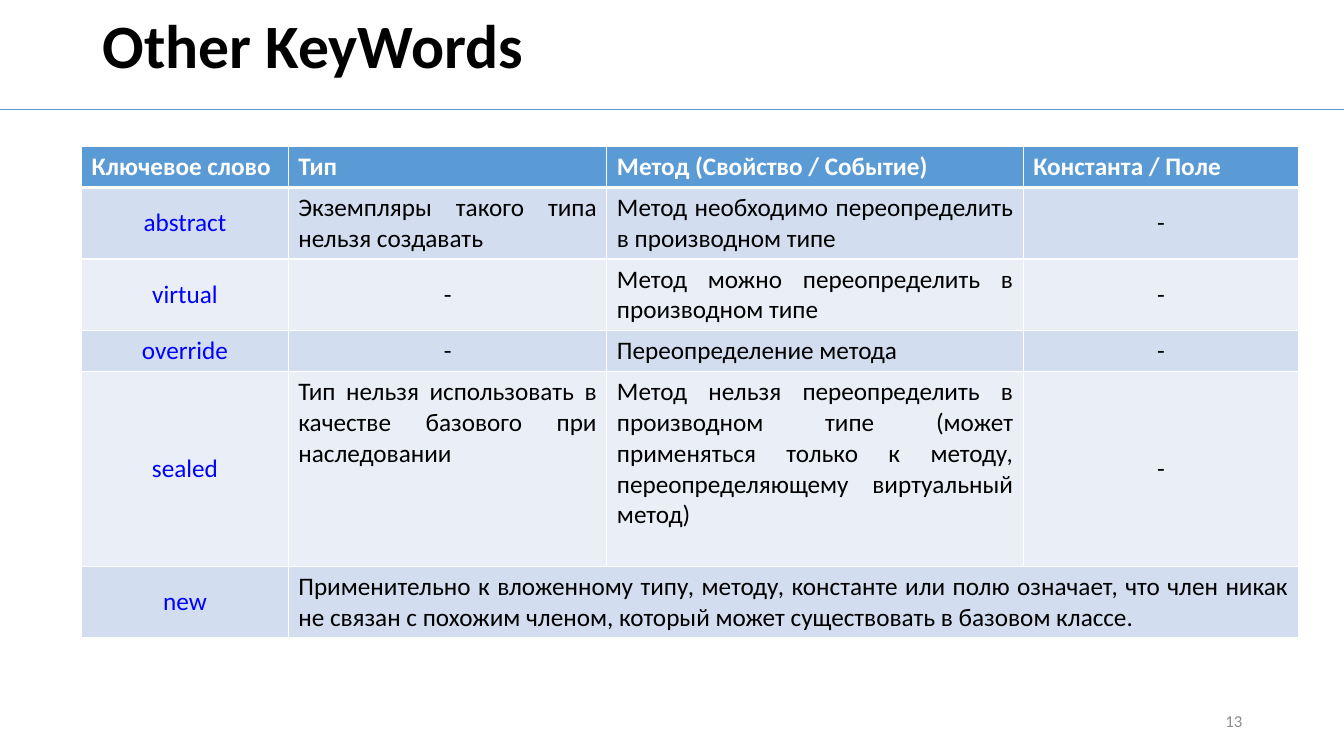
from dataclasses import dataclass

from lxml.etree import SubElement
from pptx import Presentation
from pptx.dml.color import RGBColor
from pptx.enum.shapes import MSO_CONNECTOR
from pptx.enum.text import MSO_ANCHOR, PP_ALIGN
from pptx.oxml import parse_xml
from pptx.oxml.ns import nsdecls, qn
from pptx.util import Inches, Pt


@dataclass(frozen=True)
class Theme:
    font: str = "Calibri"
    title: int = 44
    body: int = 18
    small: int = 12
    black: str = "000000"
    white: str = "FFFFFF"
    gray: str = "8C8C8C"
    blue: str = "5B9BD5"
    key: str = "0000FF"
    bands: tuple = ("D2DEEF", "EAEFF7")


theme = Theme()


def write(frame, text, size=theme.body, color=theme.black, bold=False,
          align=PP_ALIGN.LEFT, spacing=1.0):
    frame.word_wrap = True
    para = frame.paragraphs[0]
    para.alignment = align
    para.line_spacing = spacing
    run = para.add_run()
    run.text = text
    run.font.name = theme.font
    run.font.size = Pt(size)
    run.font.bold = bold
    run.font.color.rgb = RGBColor.from_string(color)


def edge(cell, widths):
    """Draw white borders, with widths in points for left, right, top, bottom."""
    props = cell._tc.get_or_add_tcPr()
    for pos, (side, width) in enumerate(zip("LRTB", widths)):
        props.insert(pos, parse_xml(
            f'<a:ln{side} {nsdecls("a")} w="{Pt(width)}"><a:solidFill>'
            f'<a:srgbClr val="{theme.white}"/></a:solidFill></a:ln{side}>'))


deck = Presentation()
deck.slide_width = Inches(13.33)
deck.slide_height = Inches(7.5)
slide = deck.slides.add_slide(deck.slide_layouts[6])

rule = slide.shapes.add_connector(
    MSO_CONNECTOR.STRAIGHT, 0, Inches(1.09), Inches(13.33), Inches(1.09))
rule.line.color.rgb = RGBColor.from_string(theme.blue)
rule.line.width = Pt(0.5)
SubElement(rule._element.spPr, qn("a:effectLst"))

labels = [
    ("Other KeyWords", (0.92, 0, 6.31, 0.96),
     dict(size=theme.title, bold=True, spacing=0.9)),
    ("13", (9.42, 6.95, 3, 0.4),
     dict(size=theme.small, color=theme.gray, align=PP_ALIGN.RIGHT)),
]
for text, place, style in labels:
    box = slide.shapes.add_textbox(*map(Inches, place))
    box.text_frame.vertical_anchor = MSO_ANCHOR.MIDDLE
    write(box.text_frame, text, **style)

rows = [
    ("Ключевое слово", "Тип", "Метод (Свойство / Событие)", "Константа / Поле"),
    ("abstract", "Экземпляры такого типа нельзя создавать",
     "Метод необходимо переопределить в производном типе", "-"),
    ("virtual", "-", "Метод можно переопределить в производном типе", "-"),
    ("override", "-", "Переопределение метода", "-"),
    ("sealed", "Тип нельзя использовать в качестве базового при наследовании",
     "Метод нельзя переопределить в производном типе (может применяться "
     "только к методу, переопределяющему виртуальный метод)", "-"),
    ("new", "Применительно к вложенному типу, методу, константе или полю "
     "означает, что член никак не связан с похожим членом, который может "
     "существовать в базовом классе.", "", ""),
]
widths = [2.05, 3.16, 4.13, 2.73]
heights = [0.41, 0.71, 0.71, 0.41, 1.93, 0.71]

grid = slide.shapes.add_table(
    len(rows), len(widths), Inches(0.81), Inches(1.45),
    Inches(sum(widths)), Inches(sum(heights))).table
for col, width in zip(grid.columns, widths):
    col.width = Inches(width)
for row, height in zip(grid.rows, heights):
    row.height = Inches(height)

grid.cell(5, 1).merge(grid.cell(5, 3))
for r, row in enumerate(rows):
    for c, text in enumerate(row):
        cell = grid.cell(r, c)
        shade = theme.bands[(r - 1) % 2] if r else theme.blue
        cell.fill.solid()
        cell.fill.fore_color.rgb = RGBColor.from_string(shade)
        edge(cell, (1, 1, 3 if r == 1 else 1, 3 if r == 0 else 1))
        if not text:
            continue
        if r == 0:
            write(cell.text_frame, text, color=theme.white, bold=True)
        elif c == 0 or text == "-":
            cell.vertical_anchor = MSO_ANCHOR.MIDDLE
            write(cell.text_frame, text, align=PP_ALIGN.CENTER,
                  color=theme.black if c else theme.key)
        else:
            write(cell.text_frame, text, align=PP_ALIGN.JUSTIFY)

deck.save("out.pptx")
